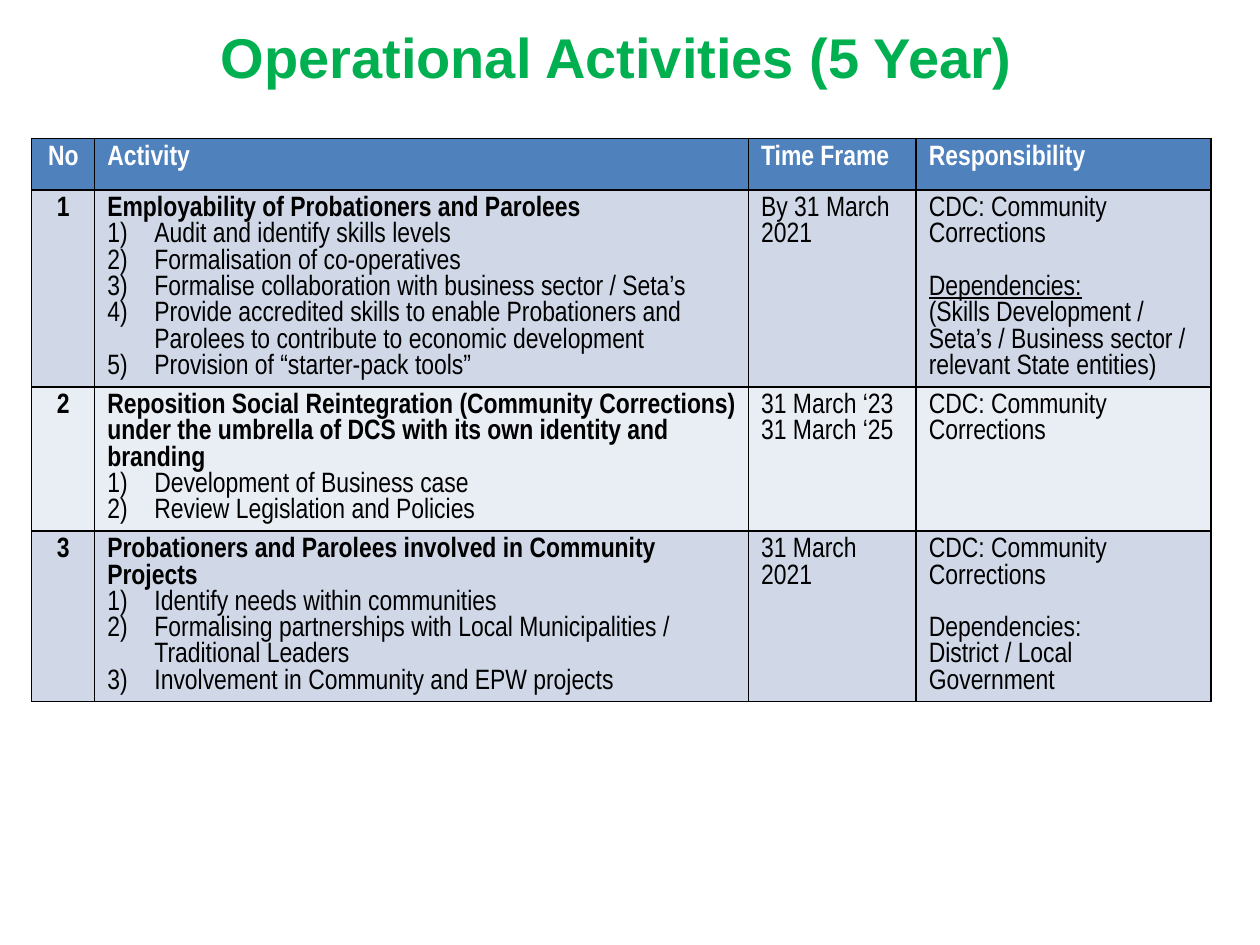
from dataclasses import dataclass

from lxml.etree import SubElement
from pptx import Presentation
from pptx.dml.color import RGBColor as RGB
from pptx.enum.text import MSO_ANCHOR, MSO_AUTO_SIZE, PP_ALIGN
from pptx.oxml.ns import qn
from pptx.util import Cm, Pt


@dataclass(frozen=True)
class Theme:
    title_font: str = "Arial"
    body_font: str = "Arial Narrow"
    title_size: float = 32
    body_size: float = 16
    gap: float = 15
    border_width: float = 1
    green: str = "00B050"
    white: str = "FFFFFF"
    black: str = "000000"
    header: str = "4F81BD"
    bands: tuple = ("D0D8E8", "E9EDF4")


THEME = Theme()

TITLE = "Operational Activities (5 Year)"
HEADERS = ["No", "Activity", "Time Frame", "Responsibility"]
CDC = "CDC: Community Corrections"

# Responsibility lines: (text, format)
ACTIVITIES = [
    dict(
        heading="Employability of Probationers and Parolees",
        steps=[
            "Audit and identify skills levels",
            "Formalisation of co-operatives",
            "Formalise collaboration with business sector / Seta’s",
            "Provide accredited skills to enable Probationers and Parolees"
            " to contribute to economic development",
            "Provision of “starter-pack tools”",
        ],
        times=["By 31 March 2021"],
        responsible=[
            (CDC, {}),
            ("Dependencies:", dict(underline=True, before=THEME.gap)),
            ("(Skills Development / Seta’s / Business sector / relevant State entities)", {}),
        ],
    ),
    dict(
        heading="Reposition Social Reintegration (Community Corrections) under the"
                " umbrella of DCS with its own identity and branding",
        steps=["Development of Business case", "Review Legislation and Policies"],
        times=["31 March ‘23", "31 March ‘25"],
        responsible=[(CDC, {})],
    ),
    dict(
        heading="Probationers and Parolees involved in Community Projects",
        steps=[
            "Identify needs within communities",
            "Formalising partnerships with Local Municipalities / Traditional Leaders",
            "Involvement in Community and EPW projects",
        ],
        times=["31 March 2021"],
        responsible=[
            (CDC, {}),
            ("Dependencies:", dict(before=THEME.gap)),
            ("District / Local Government", {}),
        ],
    ),
]

COL_WIDTHS = [1.27, 13.18, 3.38, 5.94]
ROW_HEIGHTS = [1.04, 3.97, 2.9, 3.43]


def write(p, text, *, font=THEME.body_font, size=THEME.body_size, color=THEME.black,
          bold=False, underline=False, align=PP_ALIGN.LEFT, before=0, numbered=False):
    p.alignment = align
    p.space_before = Pt(before)
    if numbered:
        pPr = p._p.get_or_add_pPr()
        pPr.set("marL", str(Cm(0.95)))
        pPr.set("indent", str(Cm(-0.95)))
        SubElement(pPr, qn("a:buFont"), typeface="+mj-lt")
        SubElement(pPr, qn("a:buAutoNum"), type="arabicParenR")
    r = p.add_run()
    r.text = text
    f = r.font
    f.name, f.size, f.bold, f.underline = font, Pt(size), bold, underline
    f.color.rgb = RGB.from_string(color)


def add_borders(cell):
    tcPr = cell._tc.get_or_add_tcPr()
    for side in ("lnL", "lnR", "lnT", "lnB"):
        ln = SubElement(tcPr, qn(f"a:{side}"), w=str(Pt(THEME.border_width)))
        SubElement(SubElement(ln, qn("a:solidFill")), qn("a:srgbClr"), val=THEME.black)


def fill_cell(cell, lines, fill):
    add_borders(cell)
    cell.fill.solid()
    cell.fill.fore_color.rgb = RGB.from_string(fill)
    tf = cell.text_frame
    for i, (text, style) in enumerate(lines):
        write(tf.add_paragraph() if i else tf.paragraphs[0], text, **style)


def table_rows():
    """Yield the fill and the cells of each row, a cell being a list of (text, format)."""
    head = dict(bold=True, color=THEME.white)
    centred = dict(align=PP_ALIGN.CENTER)
    yield THEME.header, [[(text, head | (centred if i == 0 else {}))]
                         for i, text in enumerate(HEADERS)]
    for i, a in enumerate(ACTIVITIES):
        yield THEME.bands[i % 2], [
            [(str(i + 1), dict(bold=True) | centred)],
            [(a["heading"], dict(bold=True))] + [(s, dict(numbered=True)) for s in a["steps"]],
            [(t, {}) for t in a["times"]],
            a["responsible"],
        ]


def add_title(s):
    sp = s.shapes.title
    sp.left, sp.top, sp.width, sp.height = Cm(1.63), Cm(-0.91), Cm(21.59), Cm(4.09)
    tf = sp.text_frame
    tf.auto_size = MSO_AUTO_SIZE.NONE
    tf.vertical_anchor = MSO_ANCHOR.MIDDLE
    write(tf.paragraphs[0], TITLE, font=THEME.title_font, size=THEME.title_size,
          color=THEME.green, bold=True, align=PP_ALIGN.CENTER)


def add_activity_table(s):
    table = s.shapes.add_table(len(ROW_HEIGHTS), len(COL_WIDTHS), Cm(0.64), Cm(2.79),
                               Cm(sum(COL_WIDTHS)), Cm(sum(ROW_HEIGHTS))).table
    for col, width in zip(table.columns, COL_WIDTHS):
        col.width = Cm(width)
    for row, height, (fill, cells) in zip(table.rows, ROW_HEIGHTS, table_rows()):
        row.height = Cm(height)
        for cell, lines in zip(row.cells, cells):
            fill_cell(cell, lines, fill)


def main():
    prs = Presentation()
    prs.slide_width, prs.slide_height = Cm(25.4), Cm(19.05)
    s = prs.slides.add_slide(prs.slide_layouts[5])
    add_title(s)
    add_activity_table(s)
    prs.save("out.pptx")


if __name__ == "__main__":
    main()
